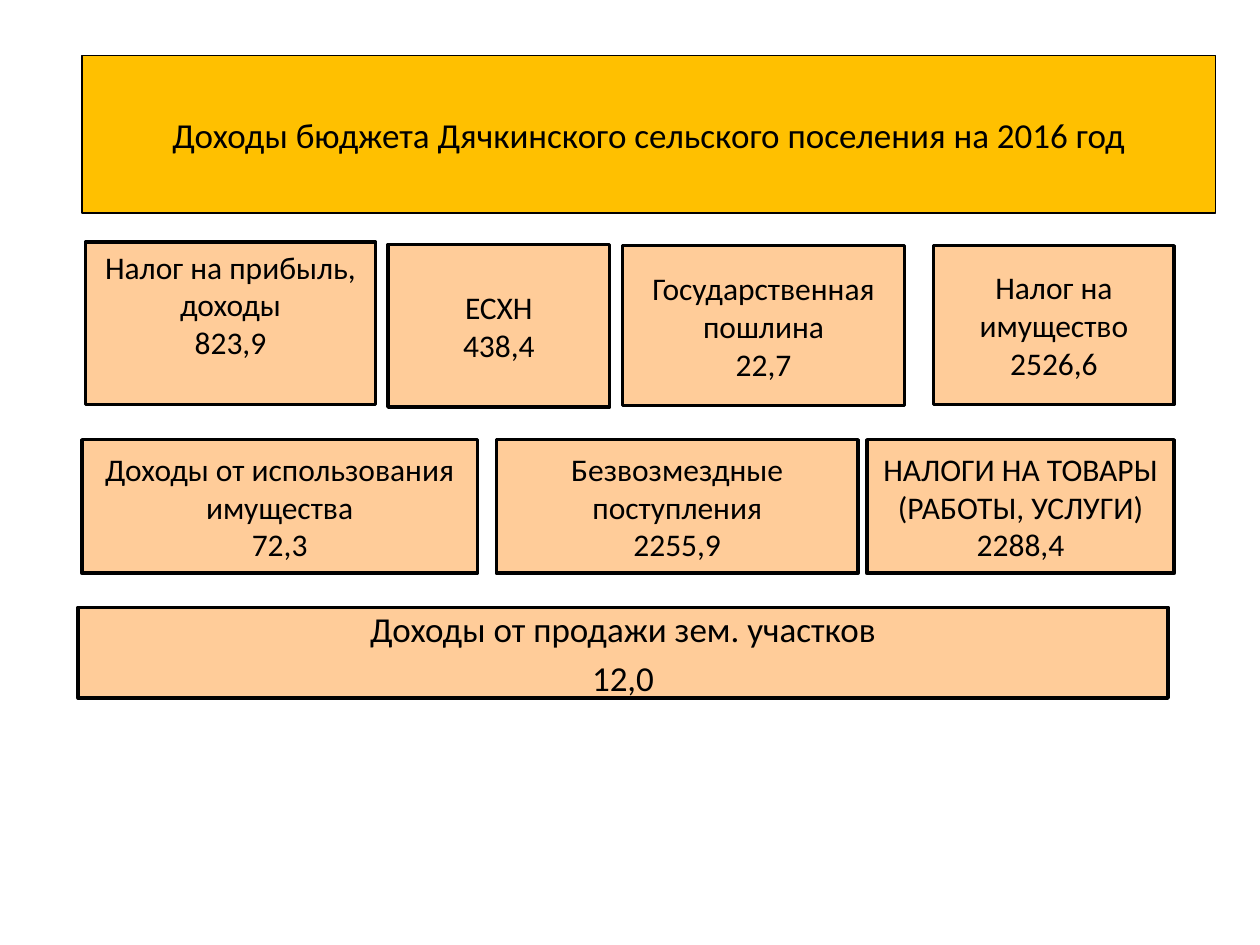
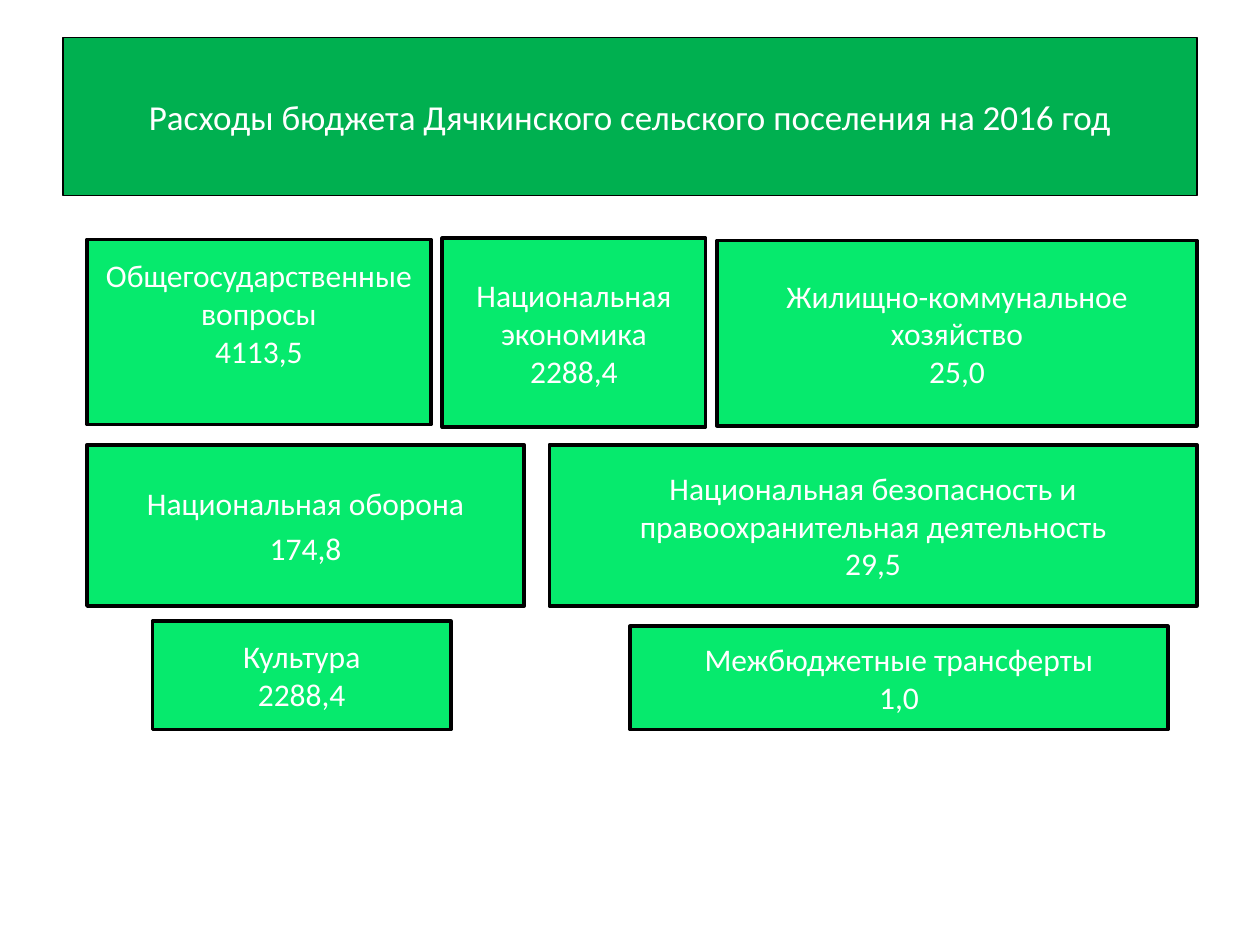
import pptx
import pptx.util
import pptx.dml.color
import pptx.enum.shapes
import pptx.enum.text
from lxml import etree

Inches, Pt = pptx.util.Inches, pptx.util.Pt
FONT = "Calibri"
LINE = "000000"
INSET = 0.05   # normal inset above and below the text
LIFT = 0.35    # bottom inset that raises the text by half a line

# Colours: title band, cards, text
INCOME = ("FFC000", "FFCC99", "000000")
SPEND = ("00B050", "06EA6D", "FFFFFF")


def color(code):
    return pptx.dml.color.RGBColor.from_string(code)


def place(shape, box):
    shape.left, shape.top, shape.width, shape.height = map(Inches, box)


def paint(shape, fill, width):
    shape.fill.solid()
    shape.fill.fore_color.rgb = color(fill)
    shape.line.color.rgb = color(LINE)
    shape.line.width = Pt(width)


def write(shape, lines, size, ink, foot=INSET):
    frame = shape.text_frame
    frame.word_wrap = True
    frame.auto_size = pptx.enum.text.MSO_AUTO_SIZE.NONE
    frame.vertical_anchor = pptx.enum.text.MSO_ANCHOR.MIDDLE
    frame.margin_top, frame.margin_bottom = Inches(INSET), Inches(foot)
    for i, line in enumerate(lines):
        para = frame.add_paragraph() if i else frame.paragraphs[0]
        para.alignment = pptx.enum.text.PP_ALIGN.CENTER
        run = para.add_run()
        run.text = line
        run.font.name = FONT
        run.font.size = Pt(size)
        run.font.color.rgb = color(ink)


def header(slide, box, text, fill, ink):
    title = slide.shapes.title
    place(title, box)
    paint(title, fill, 0.75)
    write(title, [text], 20, ink)


def body(slide, box, lines, size, fill, ink):
    shape = slide.placeholders[1]
    place(shape, box)
    paint(shape, fill, 2)
    write(shape, lines, size, ink)
    # No bullet and no hanging indent
    for para in shape.text_frame.paragraphs:
        props = para._p.get_or_add_pPr()
        props.set("marL", "0")
        props.set("indent", "0")
        etree.SubElement(props, pptx.oxml.ns.qn("a:buNone"))


def card(slide, box, lines, fill, ink, foot=INSET):
    kind = pptx.enum.shapes.MSO_SHAPE.RECTANGLE
    shape = slide.shapes.add_shape(kind, *map(Inches, box))
    shape.shadow.inherit = False
    paint(shape, fill, 2)
    write(shape, lines, 18, ink, foot)


def page(deck, theme, title, main, cards):
    band, fill, ink = theme
    slide = deck.slides.add_slide(deck.slide_layouts[1])
    header(slide, *title, band, ink)
    body(slide, *main, fill, ink)
    for box, lines, *foot in cards:
        card(slide, box, lines, fill, ink, *foot)


def main():
    deck = pptx.Presentation()
    deck.slide_width, deck.slide_height = Inches(10), Inches(7.5)

    # Income
    page(
        deck, INCOME,
        ((0.65, 0.44, 9, 1.25),
         "Доходы бюджета Дячкинского сельского поселения на 2016 год"),
        ((0.62, 4.82, 8.65, 0.72),
         ["Доходы от продажи зем. участков", "12,0"], 20),
        [
            ((0.68, 1.92, 2.3, 1.29),
             ["Налог на прибыль, доходы", "823,9"], LIFT),
            ((3.08, 1.94, 1.76, 1.29), ["ЕСХН", "438,4"]),
            ((4.94, 1.95, 2.24, 1.27), ["Государственная пошлина", "22,7"]),
            ((7.41, 1.95, 1.91, 1.26), ["Налог на имущество", "2526,6"]),
            ((0.65, 3.49, 3.14, 1.06),
             ["Доходы от использования имущества", "72,3"]),
            ((3.94, 3.49, 2.87, 1.06),
             ["Безвозмездные поступления", "2255,9"]),
            ((6.88, 3.49, 2.44, 1.06),
             ["НАЛОГИ НА ТОВАРЫ (РАБОТЫ, УСЛУГИ) 2288,4"]),
        ],
    )

    # Spending
    page(
        deck, SPEND,
        ((0.5, 0.3, 9, 1.25),
         "Расходы бюджета Дячкинского сельского поселения на 2016 год"),
        ((0.69, 3.53, 3.47, 1.28), ["Национальная оборона", "174,8"], 18),
        [
            ((0.69, 1.9, 2.73, 1.47),
             ["Общегосударственные вопросы", "4113,5"], LIFT),
            ((3.51, 1.89, 2.09, 1.5), ["Национальная экономика", "2288,4"]),
            ((5.69, 1.91, 3.81, 1.47),
             ["Жилищно-коммунальное хозяйство", "25,0"]),
            ((4.36, 3.53, 5.14, 1.28),
             ["Национальная безопасность и правоохранительная деятельность",
              "29,5"]),
            ((1.21, 4.93, 2.37, 0.86), ["Культура", "2288,4"]),
            ((5, 4.97, 4.27, 0.82), ["Межбюджетные трансферты", "1,0"]),
        ],
    )
    deck.save("out.pptx")


if __name__ == "__main__":
    main()
